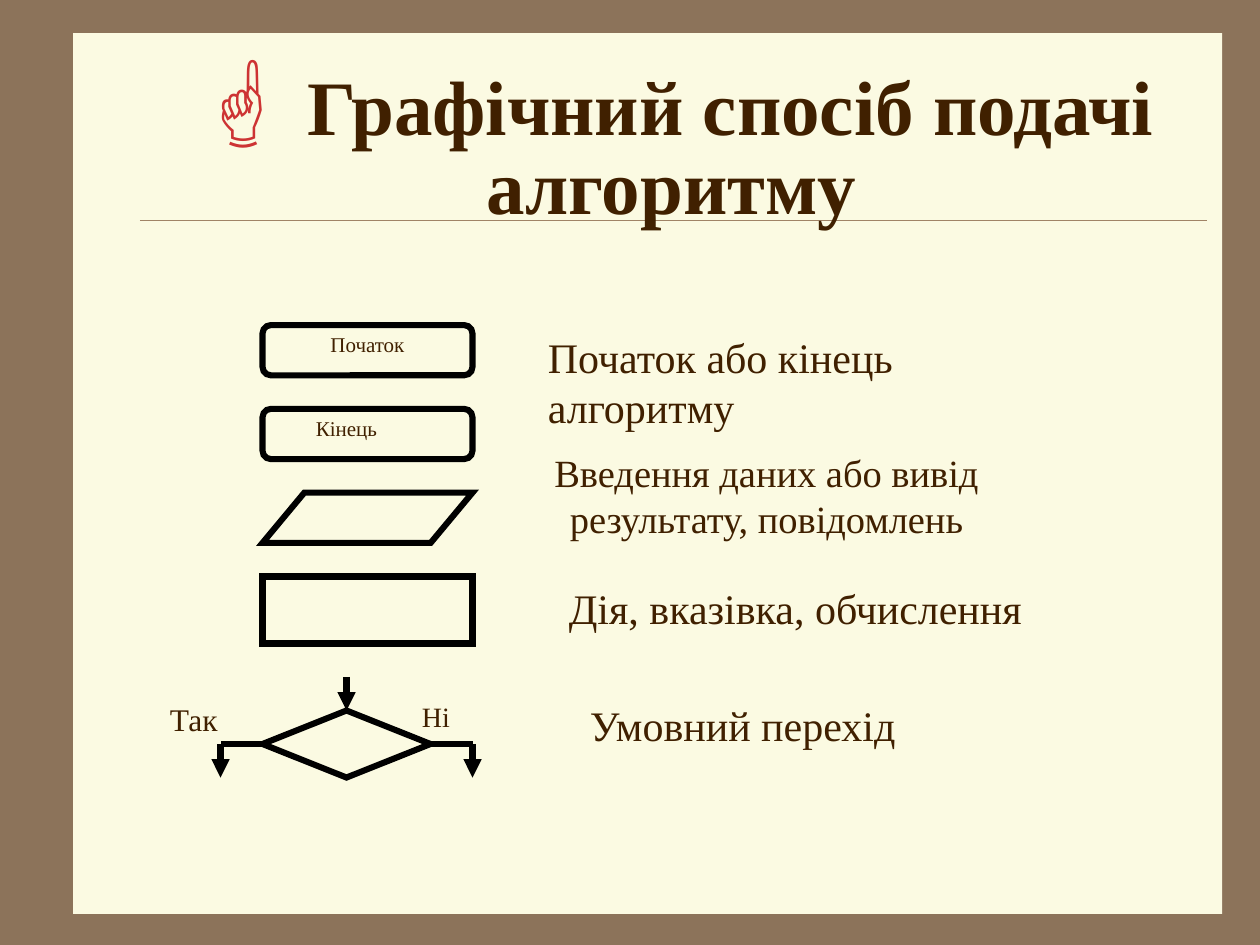
from pptx import Presentation
from pptx.dml.color import RGBColor
from pptx.enum.shapes import MSO_CONNECTOR, MSO_SHAPE
from pptx.enum.text import MSO_ANCHOR, MSO_AUTO_SIZE, PP_ALIGN
from pptx.oxml.ns import qn
from pptx.util import Inches, Pt
from lxml import etree

CENTER, LEFT = PP_ALIGN.CENTER, PP_ALIGN.LEFT
MIDDLE, NO_FIT = MSO_ANCHOR.MIDDLE, MSO_AUTO_SIZE.NONE
STRAIGHT = MSO_CONNECTOR.STRAIGHT
RECTANGLE, ROUNDED = MSO_SHAPE.RECTANGLE, MSO_SHAPE.ROUNDED_RECTANGLE
PARALLELOGRAM = MSO_SHAPE.PARALLELOGRAM
PROCESS, DECISION = MSO_SHAPE.FLOWCHART_PROCESS, MSO_SHAPE.FLOWCHART_DECISION

BROWN = RGBColor(0x8C, 0x73, 0x5A)
CREAM = RGBColor(0xFB, 0xFA, 0xE2)
TAN = RGBColor(0xA0, 0x83, 0x66)
INK = RGBColor(0x40, 0x20, 0x00)
RED = RGBColor(0xCD, 0x33, 0x33)
BLACK = RGBColor(0x00, 0x00, 0x00)


class FlowchartSlide:
    FONT = "Times New Roman"
    STROKE = Pt(3.5)
    COLUMN = 1 / 12
    ROW = 0.133
    TOP = 2.58

    def __init__(self, deck):
        self.deck = deck
        self.slide = deck.slides.add_slide(deck.slide_layouts[5])
        background = self.slide.background.fill
        background.solid()
        background.fore_color.rgb = BROWN

    def share(self, x, y):
        return int(self.deck.slide_width * x), int(self.deck.slide_height * y)

    def point(self, column, row):
        return Inches(column * self.COLUMN), Inches(self.TOP + row * self.ROW)

    def size(self, columns, rows):
        return Inches(columns * self.COLUMN), Inches(rows * self.ROW)

    def style_run(self, run, size, color=INK, bold=False):
        font = run.font
        font.name, font.size, font.bold = self.FONT, Pt(size), bold
        font.color.rgb = color

    def panel(self, position, extent):
        sheet = self.slide.shapes.add_shape(
            RECTANGLE, *self.share(*position), *self.share(*extent))
        sheet.shadow.inherit = False
        sheet.fill.solid()
        sheet.fill.fore_color.rgb = CREAM
        sheet.line.fill.background()

    def stroke(self, start, end, color, width):
        connector = self.slide.shapes.add_connector(STRAIGHT, *start, *end)
        connector.line.color.rgb = color
        connector.line.width = width
        etree.SubElement(connector._element.spPr, qn("a:effectLst"))
        return connector

    def rule(self, start, end):
        self.stroke(self.share(*start), self.share(*end), TAN, Pt(0.25))

    def title(self, symbol, wording, position, extent):
        heading = self.slide.shapes.title
        self.slide.shapes._spTree.append(heading._element)
        heading.left, heading.top = self.share(*position)
        heading.width, heading.height = self.share(*extent)
        frame = heading.text_frame
        frame.auto_size, frame.vertical_anchor = NO_FIT, MIDDLE
        frame.word_wrap = True
        paragraph = frame.paragraphs[0]
        paragraph.alignment, paragraph.line_spacing = CENTER, 0.8
        for text, size, color in ((symbol, 60, RED), (wording, 44, INK)):
            run = paragraph.add_run()
            run.text = text
            self.style_run(run, size, color, True)

    def block(self, kind, column, row, columns, rows, adjustment=None):
        outline = self.slide.shapes.add_shape(
            kind, *self.point(column, row), *self.size(columns, rows))
        outline.shadow.inherit = False
        outline.fill.background()
        outline.line.color.rgb = BLACK
        outline.line.width = self.STROKE
        etree.SubElement(outline.line._get_or_add_ln(), qn("a:miter"), lim="800000")
        if adjustment is not None:
            outline.adjustments[0] = adjustment

    def branch(self, start, end, arrow=False):
        connector = self.stroke(
            self.point(*start), self.point(*end), BLACK, self.STROKE)
        if arrow:
            etree.SubElement(
                connector.line._get_or_add_ln(), qn("a:tailEnd"), type="triangle")

    def label(self, text, size, column, row, columns, rows, alignment=LEFT):
        caption = self.slide.shapes.add_textbox(
            *self.point(column, row), *self.size(columns, rows))
        frame = caption.text_frame
        frame.word_wrap = True
        frame.text = text
        paragraph = frame.paragraphs[0]
        paragraph.alignment = alignment
        self.style_run(paragraph.runs[0], size)


def main():
    deck = Presentation()
    deck.slide_width, deck.slide_height = Inches(10), Inches(7.5)
    page = FlowchartSlide(deck)

    page.panel((0.058, 0.035), (0.912, 0.932))
    page.rule((0.111, 0.233), (0.958, 0.233))
    page.title("☝", " Графічний спосіб подачі алгоритму",
               (0.108, 0.067), (0.85, 0.167))

    for kind, row, columns, rows, adjustment in (
        (ROUNDED, 0, 20, 3, 0.167),
        (ROUNDED, 5, 20, 3, 0.167),
        (PARALLELOGRAM, 10, 20, 3, 0.833),
        (PROCESS, 15, 20, 4, None),
        (DECISION, 23, 16, 4, None),
    ):
        page.block(kind, 25, row, columns, rows, adjustment)

    page.branch((33, 21), (33, 23), arrow=True)
    for corner, outer in ((25, 21), (41, 45)):
        page.branch((corner, 25), (outer, 25))
        page.branch((outer, 25), (outer, 27), arrow=True)

    for text, size, column, row, columns, rows, alignment in (
        ("Початок", 12, 25, 0, 20, 3, CENTER),
        ("Кінець", 12, 23, 5, 20, 3, CENTER),
        ("Так", 18, 15, 22, 14, 3, LEFT),
        ("Ні", 16, 39, 22, 14, 3, LEFT),
        ("Початок або кінець алгоритму", 24, 51, 0, 44, 7, LEFT),
        ("Введення даних або вивід результату, повідомлень",
         22, 51, 7, 44, 8, CENTER),
        ("Дія, вказівка, обчислення", 24, 53, 15, 50, 4, LEFT),
        ("Умовний перехід", 24, 55, 22, 50, 3, LEFT),
    ):
        page.label(text, size, column, row, columns, rows, alignment)

    deck.save("out.pptx")


if __name__ == "__main__":
    main()
